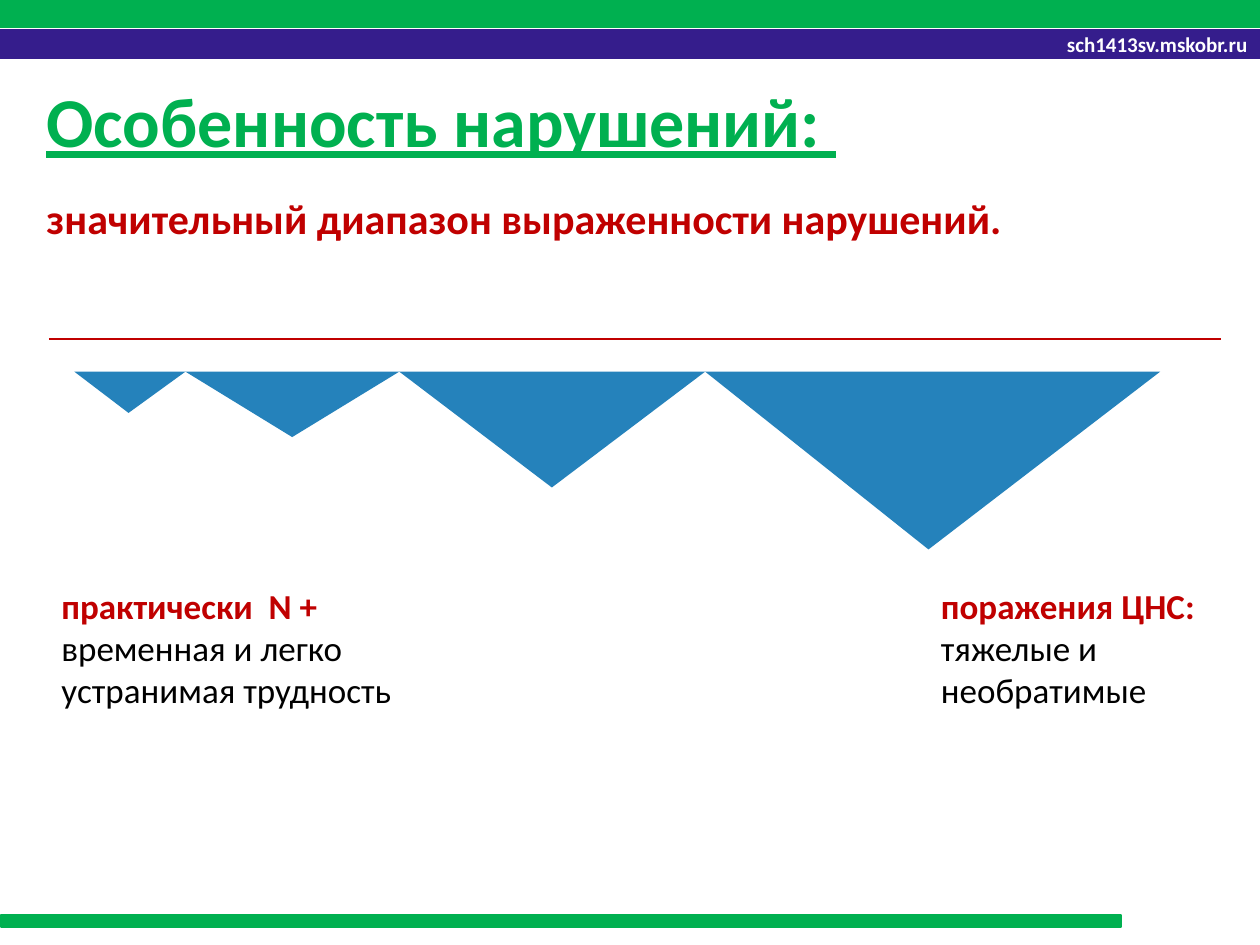
from lxml.etree import SubElement
from pptx import Presentation
from pptx.dml.color import RGBColor
from pptx.enum.shapes import MSO_CONNECTOR, MSO_SHAPE
from pptx.enum.text import MSO_ANCHOR, MSO_AUTO_SIZE, PP_ALIGN
from pptx.oxml.ns import qn
from pptx.util import Pt

GREEN, VIOLET, RED, BLUE = "00B050", "351D8C", "C00000", "2582BB"
BLACK, WHITE = "000000", "FFFFFF"


def color(value):
    return RGBColor.from_string(value)


class SlideBuilder:
    font_name = "Calibri"

    def __init__(self, slide):
        self.slide = slide

    def style(self, para, size, ink, bold=False, underline=None):
        font = para.font
        font.name, font.size, font.bold = self.font_name, Pt(size), bold
        font.underline = underline
        font.color.rgb = color(ink)

    def band(self, left, top, width, height, fill):
        shape = self.slide.shapes.add_shape(
            MSO_SHAPE.RECTANGLE, Pt(left), Pt(top), Pt(width), Pt(height))
        shape.shadow.inherit = False
        shape.fill.solid()
        shape.fill.fore_color.rgb = color(fill)
        shape.line.color.rgb = color(fill)
        shape.line.width = Pt(1)
        return shape

    def label(self, shape, text, size, ink):
        frame = shape.text_frame
        frame.vertical_anchor = MSO_ANCHOR.MIDDLE
        para = frame.paragraphs[0]
        para.text, para.alignment = text, PP_ALIGN.RIGHT
        self.style(para, size, ink, bold=True)

    def text(self, left, top, width, height, lines, size, wrap=True):
        """Add a text box; each line is (text, colour, bold)."""
        box = self.slide.shapes.add_textbox(Pt(left), Pt(top), Pt(width), Pt(height))
        frame = box.text_frame
        frame.word_wrap = wrap
        frame.auto_size = MSO_AUTO_SIZE.SHAPE_TO_FIT_TEXT
        for index, (content, ink, bold) in enumerate(lines):
            para = frame.add_paragraph() if index else frame.paragraphs[0]
            para.text = content
            self.style(para, size, ink, bold)

    def title(self, left, top, width, height, content, size, ink):
        box = self.slide.shapes.add_textbox(Pt(left), Pt(top), Pt(width), Pt(height))
        frame = box.text_frame
        frame.word_wrap = True
        frame.vertical_anchor = MSO_ANCHOR.MIDDLE
        para = frame.paragraphs[0]
        para.text, para.line_spacing = content, 0.9
        self.style(para, size, ink, bold=True, underline=True)

    def rule(self, left, right, top, ink, width):
        line = self.slide.shapes.add_connector(
            MSO_CONNECTOR.STRAIGHT, Pt(left), Pt(top), Pt(right), Pt(top))
        line.line.color.rgb = color(ink)
        line.line.width = Pt(width)
        SubElement(line._element.spPr, qn("a:effectLst"))

    def triangles(self, top, corners, tips, fill):
        """Draw a row of triangles hanging from one level, as one outline."""
        builder = self.slide.shapes.build_freeform(Pt(corners[0]), Pt(top))
        for index, (left, right, tip) in enumerate(zip(corners, corners[1:], tips)):
            if index:
                builder.move_to(Pt(left), Pt(top))
            tip_x, tip_y = tip
            builder.add_line_segments(
                [(Pt(right), Pt(top)), (Pt(tip_x), Pt(tip_y))], close=True)
        shape = builder.convert_to_shape()
        shape.shadow.inherit = False
        shape.fill.solid()
        shape.fill.fore_color.rgb = color(fill)
        shape.line.fill.background()


def main():
    deck = Presentation()
    deck.slide_width, deck.slide_height = Pt(720), Pt(540)
    page = SlideBuilder(deck.slides.add_slide(deck.slide_layouts[6]))

    # Header and footer bands
    page.band(0, 0, 720, 15.5, GREEN)
    site_band = page.band(0, 17, 720, 16, VIOLET)
    page.label(site_band, "sch1413sv.mskobr.ru", 12, WHITE)
    page.band(0.5, 522.7, 640, 7, GREEN)

    # Title and subtitle
    page.title(19.5, 36, 674.6, 70.5, "Особенность нарушений: ", 40, GREEN)
    page.text(19.5, 106.5, 670, 36,
              [("значительный диапазон выраженности нарушений.", RED, True)], 24)

    # Scale of severity
    page.rule(28, 698, 193.8, RED, 1.25)
    page.triangles(212.4, [42.5, 106, 228.2, 403, 663],
                   [(73.5, 236), (167, 249.8), (315.4, 278.6), (530.6, 314)], BLUE)

    # Ends of the scale
    page.text(28, 330.5, 204.5, 80,
              [("практически  N +", RED, True),
               ("временная и легко", BLACK, False),
               ("устранимая трудность", BLACK, False)], 20, wrap=False)
    page.text(530.6, 330.5, 163.5, 80,
              [("поражения ЦНС:", RED, True),
               ("тяжелые и", BLACK, False),
               ("необратимые", BLACK, False)], 20)

    deck.save("out.pptx")


if __name__ == "__main__":
    main()
